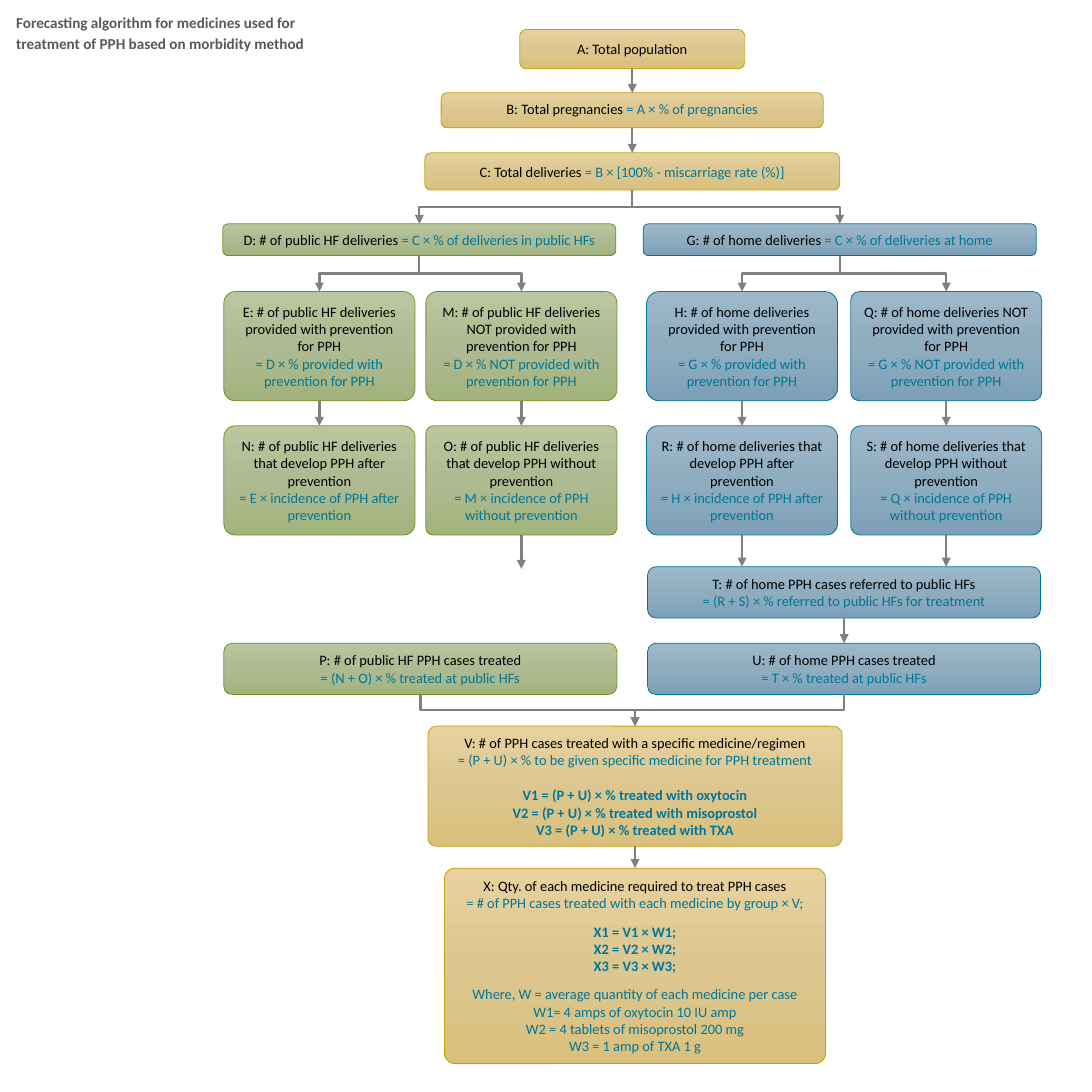
from copy import deepcopy

from lxml import etree
from pptx import Presentation
from pptx import util as u
from pptx.dml.color import RGBColor
from pptx.enum import shapes, text
from pptx.oxml.ns import qn

COLORS = {"label": "000000", "formula": "007698", "arrow": "808080", "title": "595959"}
THEMES = {
    "gold": (["E7D19D", "DDC790", "DAC07C"], "C2A204"),
    "green": (["BAC69E", "AEBB92", "A3B37D"], "788E1E"),
    "blue": (["9DB8CA", "90ADC0", "7CA0B7"], "007698"),
}

prs = Presentation()
prs.slide_width = prs.slide_height = u.Inches(10)
s = prs.slides.add_slide(prs.slide_layouts[6])


def add_run(p, words, color, size=9.5, bold=False):
    r = p.add_run()
    r.text = words
    r.font.name = "Calibri"
    r.font.size = u.Pt(size)
    r.font.bold = bold
    r.font.color.rgb = RGBColor.from_string(COLORS[color])


def add_arrow(kind, x1, y1, x2, y2):
    c = s.shapes.add_connector(kind, *[u.Inches(v) for v in (x1, y1, x2, y2)])
    c.line.color.rgb = RGBColor.from_string(COLORS["arrow"])
    c.line.width = u.Pt(1.5)
    etree.SubElement(c.line._get_or_add_ln(), qn("a:tailEnd"), type="triangle")
    etree.SubElement(c._element.spPr, qn("a:effectLst"))
    return c


boxes = [
    ("gold", 4.76, 0.27, 2.06, 0.36, 0.167, "A: Total population", ""),
    ("gold", 4.04, 0.85, 3.5, 0.32, 0.167, "B: Total pregnancies", "= A × % of pregnancies"),
    ("gold", 3.89, 1.4, 3.8, 0.34, 0.167, "C: Total deliveries",
     "= B × [100% - miscarriage rate (%)]"),
    ("green", 2.04, 2.05, 3.6, 0.29, 0.167, "D: # of public HF deliveries",
     "= C × % of deliveries in public HFs"),
    ("blue", 5.89, 2.05, 3.6, 0.29, 0.167, "G: # of home deliveries",
     "= C × % of deliveries at home"),
    ("green", 2.05, 5.89, 3.6, 0.47, 0.167, "P: # of public HF PPH cases treated",
     "= (N + O) × % treated at public HFs"),
    ("blue", 5.93, 5.19, 3.6, 0.47, 0.167, "T: # of home PPH cases referred to public HFs",
     "= (R + S) × % referred to public HFs for treatment"),
    ("blue", 5.93, 5.89, 3.6, 0.47, 0.167, "U: # of home PPH cases treated",
     "= T × % treated at public HFs"),
    ("gold", 3.92, 6.65, 3.79, 1.1, 0.068,
     "V: # of PPH cases treated with a specific medicine/regimen",
     "= (P + U) × % to be given specific medicine for PPH treatment"),
    ("gold", 4.07, 7.95, 3.49, 1.79, 0.055,
     "X: Qty. of each medicine required to treat PPH cases",
     "= # of PPH cases treated with each medicine by group × V;"),
]

columns = [
    ("green", 2.05, "public HF", "D", "E", "N", "", "after", 0.105, 0.105),
    ("green", 3.9, "public HF", "D", "M", "O", "NOT ", "without", 0.105, 0.068),
    ("blue", 5.92, "home", "G", "H", "R", "", "after", 0.117, 0.105),
    ("blue", 7.79, "home", "G", "Q", "S", "NOT ", "without", 0.08, 0.092),
]
for theme, x, place, parent, upper, lower, negation, when, adj1, adj2 in columns:
    boxes += [
        (theme, x, 2.67, 1.75, 1, adj1,
         f"{upper}: # of {place} deliveries {negation}provided with prevention for PPH",
         f"= {parent} × % {negation}provided with prevention for PPH"),
        (theme, x, 3.9, 1.75, 1, adj2,
         f"{lower}: # of {place} deliveries that develop PPH {when} prevention",
         f"= {upper} × incidence of PPH {when} prevention"),
    ]

details = {
    "V": [(11.6, True, ["V1 = (P + U) × % treated with oxytocin",
                        "V2 = (P + U) × % treated with misoprostol",
                        "V3 = (P + U) × % treated with TXA"])],
    "X": [(7.3, True, ["X1 = V1 × W1;", "X2 = V2 × W2;", "X3 = V3 × W3;"]),
          (7.3, False, ["Where, W = average quantity of each medicine per case",
                        "W1= 4 amps of oxytocin 10 IU amp",
                        "W2 = 4 tablets of misoprostol 200 mg",
                        "W3 = 1 amp of TXA 1 g"])],
}

steps = {}
for theme, x, y, w, h, adj, label, formula in boxes:
    sp = s.shapes.add_shape(shapes.MSO_SHAPE.ROUNDED_RECTANGLE,
                            *[u.Inches(v) for v in (x, y, w, h)])
    steps[label[0]] = sp
    sp.adjustments[0] = adj
    sp.shadow.inherit = False
    stops, edge = THEMES[theme]
    sp.fill.gradient()
    sp.fill.gradient_angle = 270
    first = sp._element.spPr.find(".//" + qn("a:gs"))
    first.addnext(deepcopy(first))
    for stop, position, color in zip(sp.fill.gradient_stops, (0, 0.5, 1), stops):
        stop.position = position
        stop.color.rgb = RGBColor.from_string(color)
    sp.line.color.rgb = RGBColor.from_string(edge)
    sp.line.width = u.Pt(0.5)
    tf = sp.text_frame
    tf.word_wrap = True
    tf.vertical_anchor = text.MSO_ANCHOR.MIDDLE
    p = tf.paragraphs[0]
    one_line = h < 0.4
    add_run(p, label + " " if one_line and formula else label, "label")
    if formula:
        add_run(p if one_line else tf.add_paragraph(), formula, "formula")
    for gap, bold, lines in details.get(label[0], []):
        for i, line in enumerate(lines):
            p = tf.add_paragraph()
            p.space_before = u.Pt(0 if i else gap)
            add_run(p, line, "formula", bold=bold)
    for p in tf.paragraphs:
        p.alignment = text.PP_ALIGN.CENTER
steps["B"].text_frame.vertical_anchor = text.MSO_ANCHOR.TOP

for start, end in ("AB", "BC", "EN", "MO", "HR", "QS", "TU", "VX"):
    c = add_arrow(shapes.MSO_CONNECTOR.STRAIGHT, 0, 0, 1, 1)
    c.begin_connect(steps[start], 2)
    c.end_connect(steps[end], 0)

for start, bottom in (("O", 5.21), ("R", 5.19), ("S", 5.19)):
    sp = steps[start]
    x = (sp.left + sp.width / 2) / u.Inches(1)
    c = add_arrow(shapes.MSO_CONNECTOR.STRAIGHT, x, 4.9, x, bottom)
    c.begin_connect(sp, 2)

for start, end in ("CD", "CG", "DE", "DM", "GH", "GQ", "PV", "UV"):
    c = add_arrow(shapes.MSO_CONNECTOR.ELBOW, 0, 0, 1, 1)
    c.begin_connect(steps[start], 2)
    c.end_connect(steps[end], 0)
    x1, y1, x2, y2 = c.begin_x, c.begin_y, c.end_x, c.end_y
    run, drop = abs(x2 - x1), y2 - y1
    xfrm = c._element.spPr.find(qn("a:xfrm"))
    for flip in ("flipH", "flipV"):
        xfrm.attrib.pop(flip, None)
    c.left, c.top = (x1 + x2 - drop) // 2, (y1 + y2 - run) // 2
    c.width, c.height = drop, run
    xfrm.set("rot", str((90 if x2 < x1 else 270) * 60000))
    if x2 > x1:
        xfrm.set("flipH", "1")

title = s.shapes.add_textbox(u.Inches(0.05), u.Inches(0.05), u.Inches(3.28), u.Inches(0.47))
tf = title.text_frame
tf.word_wrap = True
tf.auto_size = text.MSO_AUTO_SIZE.SHAPE_TO_FIT_TEXT
p = tf.paragraphs[0]
p.line_spacing = 1.15
p.space_before = u.Pt(6)
p.space_after = u.Pt(18)
add_run(p, "Forecasting algorithm for medicines used for treatment of PPH based on morbidity method",
        "title", 10, True)

prs.save("out.pptx")
